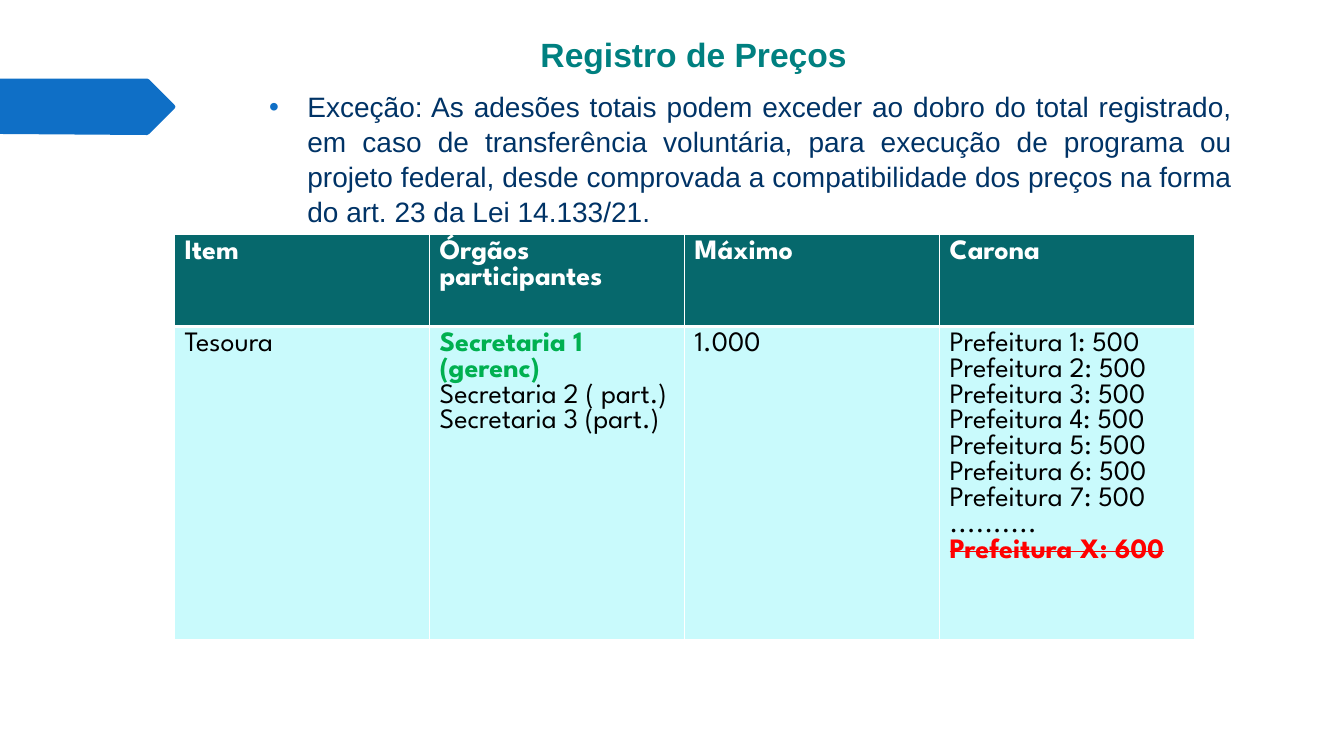
from lxml.etree import SubElement
from pptx import Presentation
from pptx.dml.color import RGBColor
from pptx.enum.text import MSO_ANCHOR, PP_ALIGN
from pptx.oxml.ns import qn
from pptx.util import Pt

PX = 9144
COLORS = {
    "white": "FFFFFF", "black": "000000", "blue": "0F6FC6", "navy": "003366",
    "teal": "008080", "header": "06686C", "cell": "C9FAFC",
    "green": "00B050", "red": "FF0000",
}


def rgb(name):
    return RGBColor.from_string(COLORS[name])


def write(p, text, font="League Spartan", size=20, color="black", bold=False,
          strike=False, align=PP_ALIGN.LEFT):
    p.alignment = align
    r = p.add_run()
    r.text = text
    r.font.name = font
    r.font.size = Pt(size)
    r.font.bold = bold
    r.font.color.rgb = rgb(color)
    if strike:
        r.font._element.set("strike", "sngStrike")


class Deck:
    def __init__(self, width, height):
        self.prs = Presentation()
        self.prs.slide_width = width * PX
        self.prs.slide_height = height * PX
        self.s = self.prs.slides.add_slide(self.prs.slide_layouts[5])

    def title(self, text, x, y, w, h, top):
        sp = self.s.shapes.title
        sp.left, sp.top, sp.width, sp.height = (v * PX for v in (x, y, w, h))
        tf = sp.text_frame
        tf.vertical_anchor = MSO_ANCHOR.TOP
        tf.margin_top = top * PX
        write(tf.paragraphs[0], text, font="Arial", size=24, color="teal",
              bold=True, align=PP_ALIGN.CENTER)

    def outline(self, points, color):
        builder = self.s.shapes.build_freeform(*points[0], scale=PX)
        builder.add_line_segments(points[1:], close=True)
        sp = builder.convert_to_shape()
        sp.shadow.inherit = False
        sp.fill.solid()
        sp.fill.fore_color.rgb = rgb(color)
        sp.line.fill.background()

    def bullet(self, text, x, y, w, h, indent):
        tf = self.s.shapes.add_textbox(*(v * PX for v in (x, y, w, h))).text_frame
        tf.word_wrap = True
        p = tf.paragraphs[0]
        p.line_spacing = 1.04
        pPr = p._p.get_or_add_pPr()
        pPr.set("marL", str(indent * PX))
        pPr.set("indent", str(-indent * PX))
        color = SubElement(pPr, qn("a:buClr"))
        SubElement(color, qn("a:srgbClr"), val=COLORS["blue"])
        SubElement(pPr, qn("a:buFont"), typeface="Arial")
        SubElement(pPr, qn("a:buChar"), char="•")
        write(p, text, font="Arial", color="navy", align=PP_ALIGN.JUSTIFY)

    def borders(self, cell, bottom):
        tcPr = cell._tc.get_or_add_tcPr()
        for side, width in (("L", 1), ("R", 1), ("T", 1), ("B", bottom)):
            ln = SubElement(tcPr, qn(f"a:ln{side}"), w=str(Pt(width)))
            fill = SubElement(ln, qn("a:solidFill"))
            SubElement(fill, qn("a:srgbClr"), val=COLORS["white"])

    def table(self, rows, x, y, col_width, heights):
        cols = len(rows[0])
        frame = self.s.shapes.add_table(
            len(rows), cols, x * PX, y * PX, cols * col_width * PX, sum(heights) * PX)
        table = frame.table
        for column in table.columns:
            column.width = col_width * PX
        for i, (row, height) in enumerate(zip(rows, heights)):
            table.rows[i].height = height * PX
            for j, lines in enumerate(row):
                cell = table.cell(i, j)
                self.borders(cell, bottom=1 if i else 3)
                cell.fill.solid()
                cell.fill.fore_color.rgb = rgb("cell" if i else "header")
                tf = cell.text_frame
                for n, (text, style) in enumerate(lines):
                    p = tf.add_paragraph() if n else tf.paragraphs[0]
                    write(p, text, **style)


def main():
    deck = Deck(1333, 750)
    deck.outline([(0, 78), (146, 78), (148, 79), (173, 104), (174, 106),
                  (173, 108), (148, 133), (146, 134), (0, 133)], "blue")
    deck.title("Registro de Preços", 113, -12, 1150, 145, top=46)
    deck.bullet(
        "Exceção: As adesões totais podem exceder ao dobro do total registrado, "
        "em caso de transferência voluntária, para execução de programa ou "
        "projeto federal, desde comprovada a compatibilidade dos preços na forma "
        "do art. 23 da Lei 14.133/21.", 257, 83, 975, 413, indent=38)

    heading = {"color": "white", "bold": True}
    header = [[(text, heading)]
              for text in ("Item", "Órgãos participantes", "Máximo", "Carona")]
    agencies = [("Secretaria 1 (gerenc)", {"color": "green", "bold": True}),
                ("Secretaria 2 ( part.)", {}), ("Secretaria 3 (part.)", {})]
    riders = [(f"Prefeitura {n}: 500", {}) for n in range(1, 8)]
    riders += [("..........", {}),
               ("Prefeitura X: 600", {"color": "red", "bold": True, "strike": True})]
    body = [[("Tesoura", {})], agencies, [("1.000", {})], riders]
    deck.table([header, body], 173, 233, 253, heights=(91, 266))
    deck.prs.save("out.pptx")


if __name__ == "__main__":
    main()
